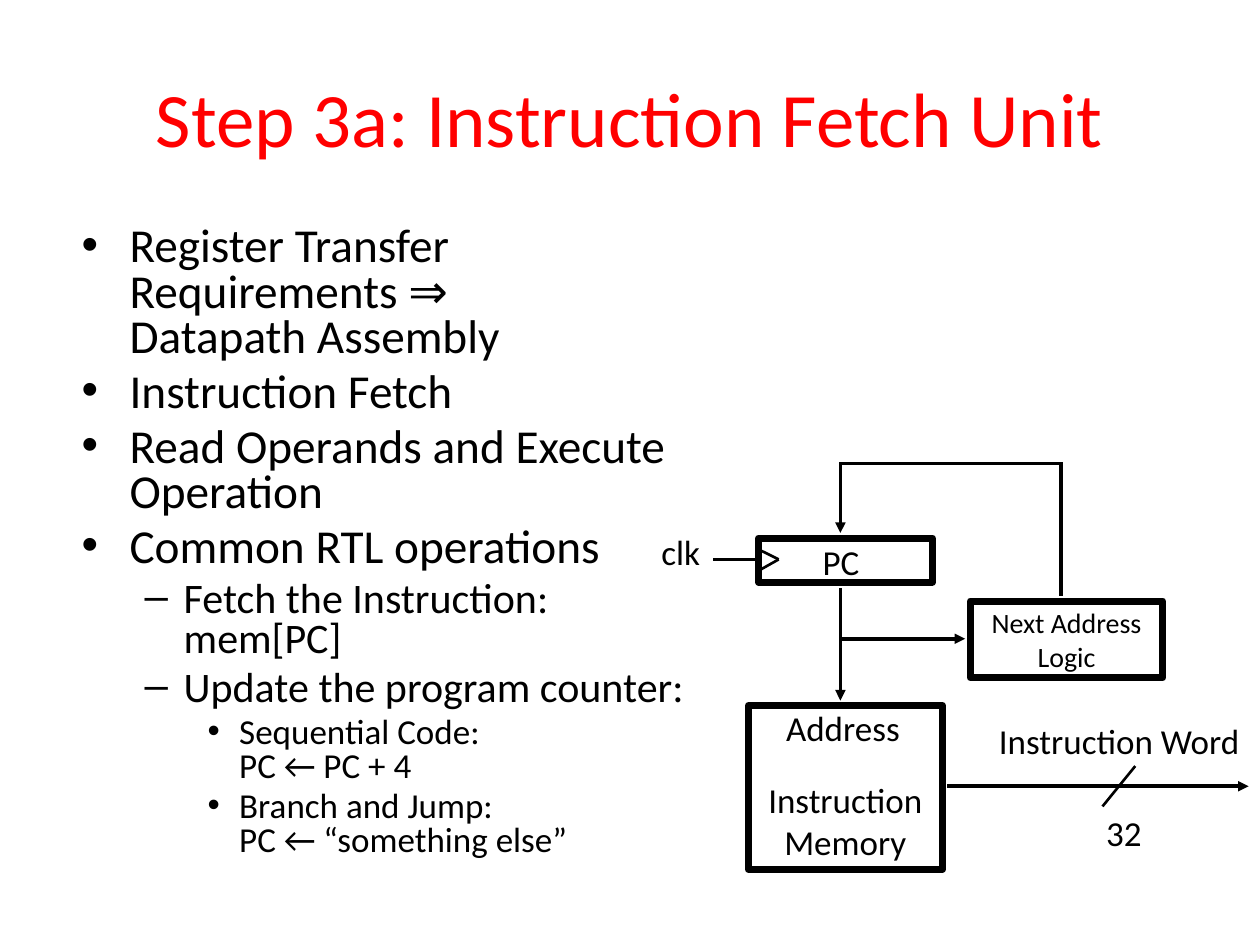
from pptx import Presentation
from pptx.dml.color import RGBColor as Rgb
from pptx.enum.shapes import MSO_CONNECTOR as Conn, MSO_SHAPE as Shape
from pptx.enum.text import MSO_ANCHOR as Anchor, PP_ALIGN as Align
from pptx.oxml.ns import qn
from pptx.util import Pt
from lxml.etree import SubElement as Sub

PX = 9144
HUES = {"title": "FF0000", "ink": "000000", "back": "FFFFFF"}
FONT = "Calibri"
LEVELS = [(27, 38, 38, "•"), (24, 81, 31, "–"), (20, 125, 25, "•")]
POINTS = [
    (0, "Register Transfer Requirements ⇒\vDatapath Assembly"),
    (0, "Instruction Fetch"),
    (0, "Read Operands and Execute Operation"),
    (0, "Common RTL operations"),
    (1, "Fetch the Instruction:\vmem[PC]"),
    (1, "Update the program counter:"),
    (2, "Sequential Code:\vPC ← PC + 4"),
    (2, "Branch and Jump:\vPC ← “something else”"),
]


def scale(*nums):
    """Turn px lengths into EMU."""
    return [n * PX for n in nums]


def color(name):
    """Look up a colour by name."""
    return Rgb.from_string(HUES[name])


def style(para, size, hue="ink"):
    """Format all runs of a paragraph."""
    for run in para.runs:
        run.font.name = FONT
        run.font.size = Pt(size)
        run.font.color.rgb = color(hue)


def write(slide, box, text, size, hue="ink", align=Align.LEFT, wrap=False):
    """Place a text box and return its frame."""
    frame = slide.shapes.add_textbox(*scale(*box)).text_frame
    frame.word_wrap = wrap
    frame.text = text
    for para in frame.paragraphs:
        para.alignment = align
        style(para, size, hue)
    return frame


def frame_box(slide, box):
    """Draw a thick hollow rectangle."""
    rect = slide.shapes.add_shape(Shape.RECTANGLE, *scale(*box))
    rect.shadow.inherit = False
    rect.fill.background()
    rect.line.color.rgb = color("ink")
    rect.line.width = Pt(4)


def wire(slide, ends, width=2, arrow=False):
    """Draw a straight line, with an arrowhead if asked."""
    line = slide.shapes.add_connector(Conn.STRAIGHT, *scale(*ends))
    line.line.color.rgb = color("ink")
    line.line.width = Pt(width)
    if arrow:
        Sub(line.line._get_or_add_ln(), qn("a:tailEnd"), type="triangle")
    Sub(line._element.spPr, qn("a:effectLst"))


def heading(slide, box):
    """Write the slide title."""
    text = "Step 3a: Instruction Fetch Unit"
    frame = write(slide, box, text, 44, "title", Align.CENTER, True)
    frame.vertical_anchor = Anchor.MIDDLE


def outline(slide, box):
    """Write the bulleted list."""
    text = "\n".join(text for _, text in POINTS)
    frame = write(slide, box, text, LEVELS[0][0], wrap=True)
    for para, (level, _) in zip(frame.paragraphs, POINTS):
        size, left, hang, mark = LEVELS[level]
        para.level = level
        para.line_spacing = 0.8
        para.space_before = Pt(size * 0.2)
        style(para, size)
        props = para._p.get_or_add_pPr()
        props.set("marL", str(left * PX))
        props.set("indent", str(-hang * PX))
        Sub(props, qn("a:buFont"), typeface="Arial")
        Sub(props, qn("a:buChar"), char=mark)


def diagram(slide, x, y):
    """Draw the fetch datapath from its top left corner."""
    for left, top, wide, high in [
        (79, 193, 154, 130), (87, 60, 138, 35), (255, 110, 153, 61),
    ]:
        frame_box(slide, (x + left, y + top, wide, high))
    for x1, y1, x2, y2, width, arrow in [
        (152, 0, 152, 56, 2, True),
        (152, 1, 327, 1, 2, False),
        (327, 0, 327, 106, 2, False),
        (152, 100, 152, 189, 2, True),
        (152, 140, 251, 140, 2, True),
        (237, 257, 476, 257, 2, True),
        (386, 241, 360, 273, 1.5, False),
        (87, 77, 51, 77, 2, False),
        (87, 69, 103, 77, 1.5, False),
        (103, 77, 87, 86, 1.5, False),
    ]:
        wire(slide, (x + x1, y + y1, x + x2, y + y2), width, arrow)
    for left, top, wide, high, text, size, align in [
        (0, 49, 52, 44, "clk", 20, Align.LEFT),
        (128, 57, 50, 44, "PC", 20, Align.LEFT),
        (261, 109, 141, 64, "Next Address\nLogic", 16, Align.CENTER),
        (99, 189, 115, 43, "Address", 20, Align.LEFT),
        (83, 246, 146, 77, "Instruction\nMemory", 20, Align.CENTER),
        (268, 199, 217, 44, "Instruction Word", 20, Align.LEFT),
        (353, 272, 48, 44, "32", 20, Align.LEFT),
    ]:
        box = (x + left, y + top, wide, high)
        write(slide, box, text, size, align=align)


def main():
    """Build and save the slide."""
    deck = Presentation()
    deck.slide_width, deck.slide_height = scale(1000, 750)
    slide = deck.slides.add_slide(deck.slide_layouts[6])
    slide.background.fill.solid()
    slide.background.fill.fore_color.rgb = color("back")
    heading(slide, (50, 30, 900, 125))
    outline(slide, (55, 175, 528, 533))
    diagram(slide, 515, 367)
    deck.save("out.pptx")


if __name__ == "__main__":
    main()
